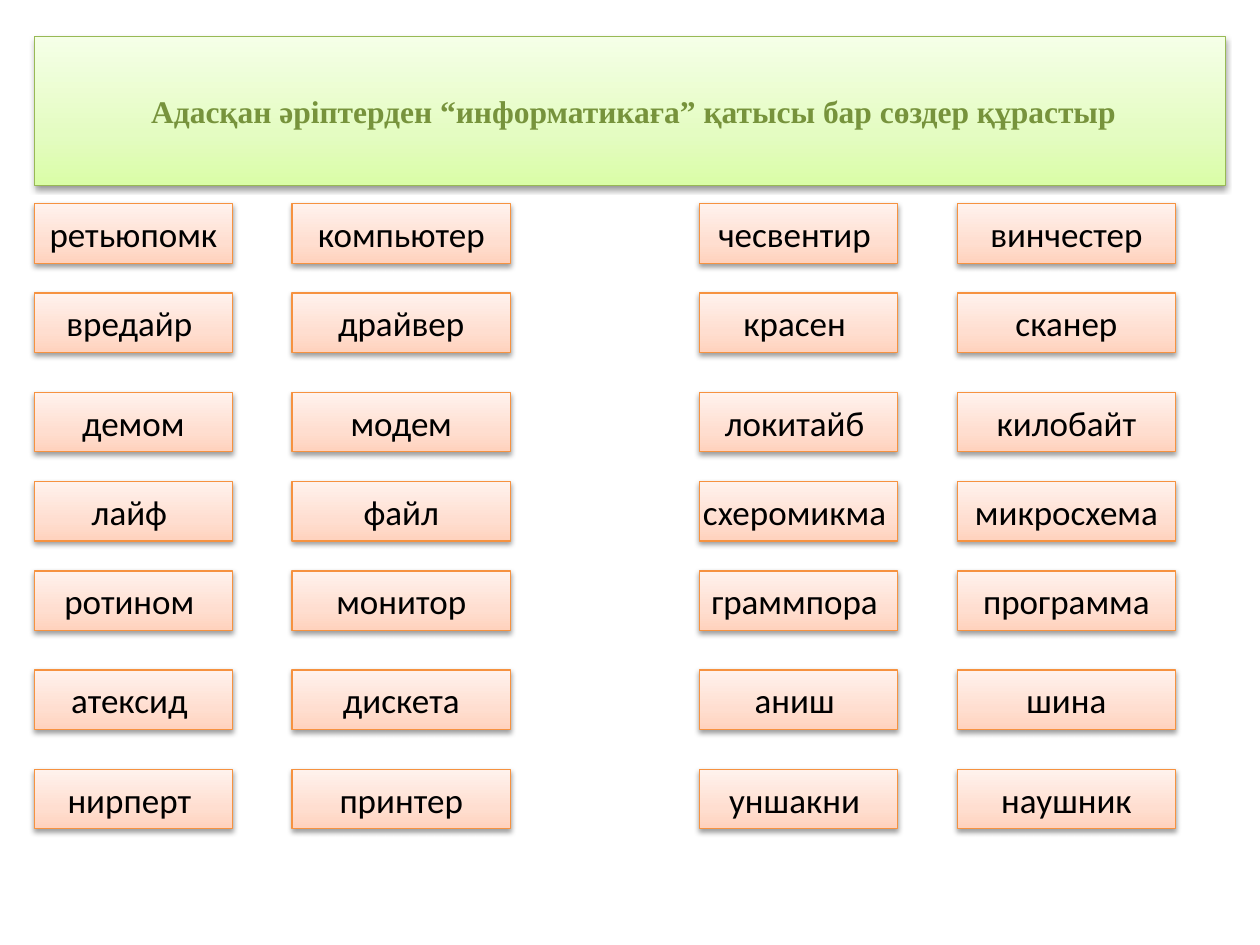
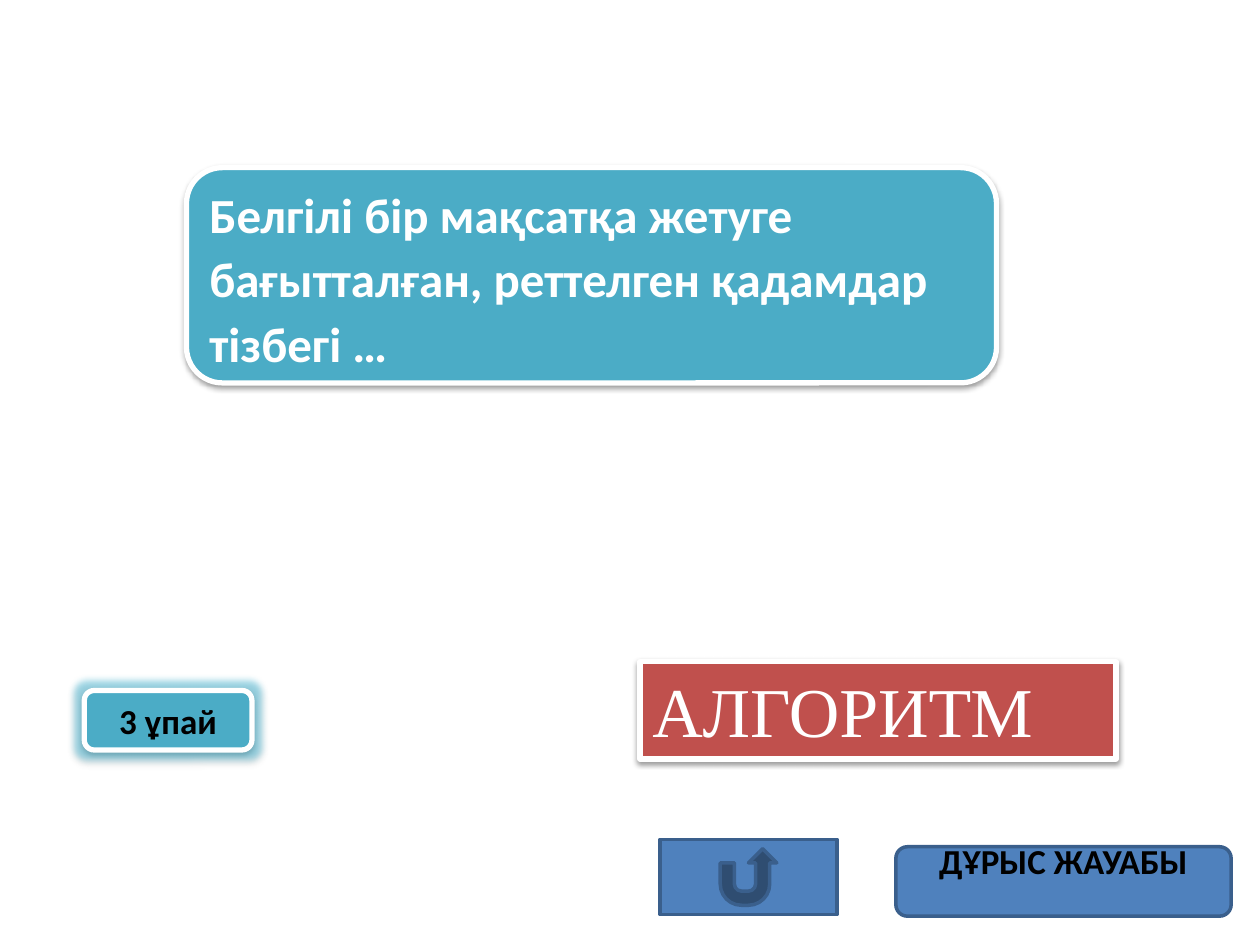
from copy import deepcopy

from lxml import etree
from pptx import Presentation
from pptx.dml.color import RGBColor
from pptx.enum.shapes import MSO_SHAPE
from pptx.enum.text import MSO_ANCHOR, PP_ALIGN
from pptx.oxml.ns import qn
from pptx.util import Cm, Pt

RECTANGLE = MSO_SHAPE.RECTANGLE
ROUNDED = MSO_SHAPE.ROUNDED_RECTANGLE
RETURN_BUTTON = MSO_SHAPE.ACTION_BUTTON_RETURN
LEFT, CENTER = PP_ALIGN.LEFT, PP_ALIGN.CENTER
TOP, MIDDLE = MSO_ANCHOR.TOP, MSO_ANCHOR.MIDDLE

BLACK, WHITE = "000000", "FFFFFF"
BLUE, BLUE_LINE = "4F81BD", "3A5F8C"
TEAL, RED = "4BACC6", "C0504D"
GLOW = "2FBADF"
ORANGE_LINE, GREEN_LINE, GREEN_TEXT = "F69240", "98B955", "77933C"
ORANGE_GRADIENT = [(0, "FFD2BD"), (0.35, "FFDED0"), (1, "FFF2ED")]
GREEN_GRADIENT = [(0, "DAFDA7"), (0.35, "E4FCC2"), (1, "F5FFE7")]
SANS, SERIF = "Calibri", "Times New Roman"

# Scrambled words keep the trailing space that shifts their centring.
LEFT_WORDS = [
    ("ретьюпомк", "компьютер"),
    ("вредайр ", "драйвер"),
    ("демом", "модем"),
    ("лайф ", "файл"),
    ("ротином ", "монитор"),
    ("атексид ", "дискета"),
    ("нирперт ", "принтер"),
]
RIGHT_WORDS = [
    ("чесвентир ", "винчестер"),
    ("красен ", "сканер"),
    ("локитайб ", "килобайт"),
    ("схеромикма ", "микросхема"),
    ("граммпора ", "программа"),
    ("аниш ", "шина"),
    ("уншакни ", "наушник"),
]
ROW_OFFSETS = [0, 1.8, 3.8, 5.6, 7.4, 9.4, 11.4]


def color(hex_string):
    return RGBColor.from_string(hex_string)


def place(shape, left, top, width, height):
    shape.left, shape.top = Cm(left), Cm(top)
    shape.width, shape.height = Cm(width), Cm(height)


def set_line(shape, hex_string, width):
    shape.line.color.rgb = color(hex_string)
    shape.line.width = Pt(width)


def fill_gradient(shape, stops):
    """Fill a shape from bottom to top with three colour stops."""
    shape.fill.gradient()
    shape.fill.gradient_angle = 90
    stop_list = shape._element.spPr.find(qn("a:gradFill")).find(qn("a:gsLst"))
    stop_list.append(deepcopy(stop_list[0]))
    for stop, (position, hex_string) in zip(shape.fill.gradient_stops, stops):
        stop.position = position
        stop.color.rgb = color(hex_string)


def add_effect(shape, name, hex_string, opacity, **attributes):
    effects = shape._element.spPr.find(qn("a:effectLst"))
    effect = etree.SubElement(effects, qn(f"a:{name}"))
    for key, value in attributes.items():
        effect.set(key, str(value))
    effect_color = etree.SubElement(effect, qn("a:srgbClr"), val=hex_string)
    etree.SubElement(effect_color, qn("a:alpha"), val=str(opacity * 1000))


def add_shadow(shape):
    add_effect(shape, "outerShdw", BLACK, 38, blurRad=Pt(3.1), dist=Pt(1.6),
               dir=90 * 60000, rotWithShape=0)


def set_text(shape, text, size, hex_string=BLACK, name=SANS, bold=False,
             align=CENTER, anchor=MIDDLE, wrap=True):
    frame = shape.text_frame
    frame.text = text
    frame.word_wrap = wrap
    frame.vertical_anchor = anchor
    paragraph = frame.paragraphs[0]
    paragraph.alignment = align
    font = paragraph.runs[0].font
    font.size, font.name, font.bold = Pt(size), name, bold
    font.color.rgb = color(hex_string)
    return paragraph


def add_box(slide, preset, box):
    shape = slide.shapes.add_shape(preset, *map(Cm, box))
    shape.shadow.inherit = False
    return shape


def add_panel(slide, preset, box, fill, line=WHITE, line_width=3):
    shape = add_box(slide, preset, box)
    shape.fill.solid()
    shape.fill.fore_color.rgb = color(fill)
    set_line(shape, line, line_width)
    return shape


def add_title(slide, box, text):
    title = slide.shapes.title
    place(title, *box)
    fill_gradient(title, GREEN_GRADIENT)
    set_line(title, GREEN_LINE, 0.75)
    title.shadow.inherit = False
    add_shadow(title)
    paragraph = set_text(title, text, 18, GREEN_TEXT, SERIF, bold=True)
    paragraph._p.get_or_add_pPr().set("marL", str(Cm(0.15)))


def add_word_pairs(slide, left, top, pairs):
    """Place scrambled words beside their solutions, one pair a row."""
    columns = [(0, 4), (5.2, 4.4)]
    for row_offset, pair in zip(ROW_OFFSETS, pairs):
        for word, (column_offset, width) in zip(pair, columns):
            card = add_box(slide, RECTANGLE,
                           (left + column_offset, top + row_offset, width, 1.2))
            fill_gradient(card, ORANGE_GRADIENT)
            set_line(card, ORANGE_LINE, 0.75)
            add_shadow(card)
            set_text(card, word, 20, wrap=False)


def add_question(slide, box, text):
    panel = add_panel(slide, ROUNDED, box, TEAL)
    add_shadow(panel)
    paragraph = set_text(panel, text, 28, WHITE, bold=True, align=LEFT)
    paragraph.line_spacing = 1.1


def add_points(slide, box, text):
    badge = add_panel(slide, ROUNDED, box, TEAL)
    add_effect(badge, "glow", GLOW, 40, rad=Pt(8))
    add_shadow(badge)
    set_text(badge, text, 20, bold=True)


def add_answer(slide, box, text):
    panel = add_panel(slide, RECTANGLE, box, RED)
    add_shadow(panel)
    set_text(panel, text, 40, WHITE, SERIF, align=LEFT, anchor=TOP)


def add_buttons(slide, left, top, text):
    """Place the return button and the answer button side by side."""
    add_panel(slide, RETURN_BUTTON, (left, top, 3.56, 1.52),
              BLUE, BLUE_LINE, 2)
    button = add_panel(slide, ROUNDED, (left + 4.75, top + 0.15, 6.76, 1.4),
                       BLUE, BLUE_LINE, 2)
    set_text(button, text, 20, bold=True)
    button.text_frame.margin_top = 0
    button.text_frame.margin_bottom = Cm(0.86)


def build_words_slide(presentation):
    slide = presentation.slides.add_slide(presentation.slide_layouts[5])
    add_title(slide, (0.7, 0.74, 24, 3),
              "Адасқан әріптерден “информатикаға” қатысы бар сөздер құрастыр")
    add_word_pairs(slide, 0.69, 4.11, LEFT_WORDS)
    add_word_pairs(slide, 14.1, 4.11, RIGHT_WORDS)


def build_question_slide(presentation):
    slide = presentation.slides.add_slide(presentation.slide_layouts[6])
    add_question(slide, (3.76, 3.38, 16.33, 4.34),
                 "Белгілі бір мақсатқа жетуге бағытталған, "
                 "реттелген қадамдар тізбегі …")
    add_points(slide, (1.7, 13.92, 3.38, 1.2), "3 ұпай")
    add_answer(slide, (12.9, 13.34, 9.6, 1.96), "АЛГОРИТМ")
    add_buttons(slide, 13.31, 16.92, "ДҰРЫС ЖАУАБЫ")


def main():
    presentation = Presentation()
    presentation.slide_width, presentation.slide_height = Cm(25.4), Cm(19.05)
    build_words_slide(presentation)
    build_question_slide(presentation)
    presentation.save("out.pptx")


if __name__ == "__main__":
    main()
